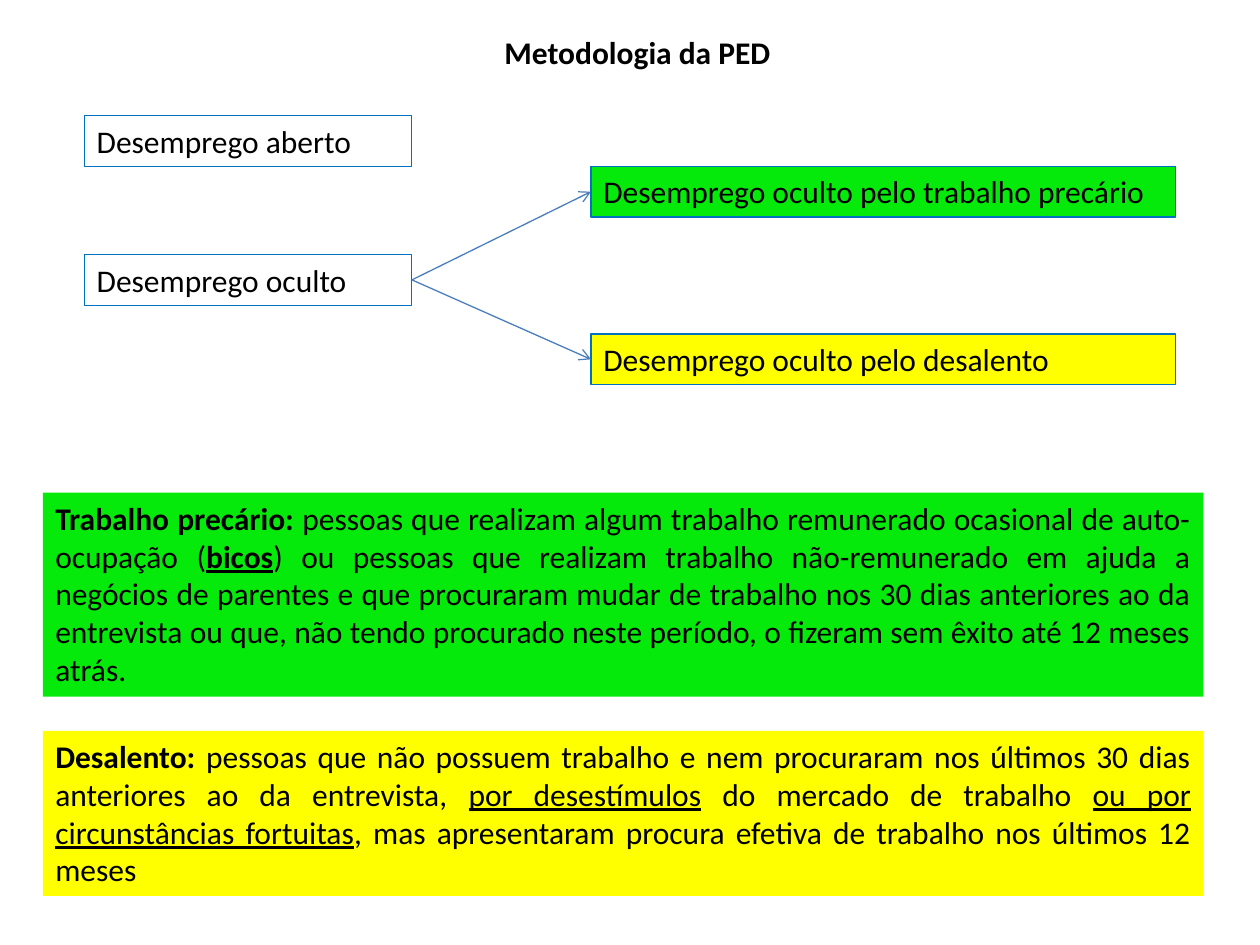
from lxml.etree import SubElement
from pptx import Presentation
from pptx.dml.color import RGBColor
from pptx.enum.shapes import MSO_CONNECTOR
from pptx.enum.text import MSO_ANCHOR, MSO_AUTO_SIZE, PP_ALIGN
from pptx.oxml.ns import qn
from pptx.util import Pt

BLACK = RGBColor(0x00, 0x00, 0x00)
GREEN = RGBColor(0x06, 0xEA, 0x0B)
YELLOW = RGBColor(0xFF, 0xFF, 0x00)
BORDER = RGBColor(0x00, 0x70, 0xC0)
ARROW = RGBColor(0x4B, 0x7E, 0xBC)

TITLE = "Metodologia da PED"
TYPES = [("Desemprego aberto", 66.2), ("Desemprego oculto", 145.4)]
HIDDEN_TYPES = [
    ("Desemprego oculto pelo trabalho precário", 95, GREEN),
    ("Desemprego oculto pelo desalento", 190.8, YELLOW),
]
DEFINITIONS = [
    (281.5, 116.6, GREEN, [
        ("Trabalho precário:", "b"),
        (" pessoas que realizam algum trabalho remunerado ocasional de auto-ocupação (", ""),
        ("bicos", "bu"),
        (") ou pessoas que realizam trabalho não-remunerado em ajuda a negócios de "
         "parentes e que procuraram mudar de trabalho nos 30 dias anteriores ao da "
         "entrevista ou que, não tendo procurado neste período, o fizeram sem êxito "
         "até 12 meses atrás.", ""),
    ]),
    (417.6, 94.3, YELLOW, [
        ("Desalento:", "b"),
        (" pessoas que não possuem trabalho e nem procuraram nos últimos 30 dias "
         "anteriores ao da entrevista, ", ""),
        ("por desestímulos", "u"),
        (" do mercado de trabalho ", ""),
        ("ou por circunstâncias fortuitas", "u"),
        (", mas apresentaram procura efetiva de trabalho nos últimos 12 meses", ""),
    ]),
]
LINE_HEIGHT = 29.1
RIGHT_SITE, LEFT_SITE = 3, 1


def write(box, runs, align):
    frame = box.text_frame
    frame.word_wrap = True
    frame.auto_size = MSO_AUTO_SIZE.SHAPE_TO_FIT_TEXT
    frame.vertical_anchor = MSO_ANCHOR.TOP
    paragraph = frame.paragraphs[0]
    paragraph.alignment = align
    paragraph.font.name = "Calibri"
    paragraph.font.size = Pt(18)
    paragraph.font.color.rgb = BLACK
    for text, style in runs:
        run = paragraph.add_run()
        run.text = text
        run.font.bold = "b" in style
        run.font.underline = "u" in style


def add_box(slide, left, top, width, height, runs, fill=None, border=None, align=PP_ALIGN.LEFT):
    box = slide.shapes.add_textbox(Pt(left), Pt(top), Pt(width), Pt(height))
    if fill is not None:
        box.fill.solid()
        box.fill.fore_color.rgb = fill
    if border is not None:
        box.line.color.rgb = border
        box.line.width = Pt(0.75)
    write(box, runs, align)
    return box


def add_arrow(slide, source, target):
    arrow = slide.shapes.add_connector(MSO_CONNECTOR.STRAIGHT, 0, 0, 0, 0)
    arrow.begin_connect(source, RIGHT_SITE)
    arrow.end_connect(target, LEFT_SITE)
    arrow.line.color.rgb = ARROW
    arrow.line.width = Pt(0.75)
    SubElement(arrow.line._get_or_add_ln(), qn("a:tailEnd"), type="arrow")
    SubElement(arrow._element.spPr, qn("a:effectLst"))


def main():
    deck = Presentation()
    deck.slide_width, deck.slide_height = Pt(720), Pt(540)
    slide = deck.slides.add_slide(deck.slide_layouts[5])

    title = slide.shapes.title
    title.left, title.top, title.width, title.height = Pt(141.8), Pt(15.1), Pt(445), Pt(LINE_HEIGHT)
    write(title, [(TITLE, "b")], PP_ALIGN.CENTER)

    type_boxes = [
        add_box(slide, 48.2, top, 187.2, LINE_HEIGHT, [(label, "")], border=BORDER)
        for label, top in TYPES
    ]
    for label, top, fill in HIDDEN_TYPES:
        hidden = add_box(slide, 337.7, top, 334.1, LINE_HEIGHT, [(label, "")], fill, BORDER)
        add_arrow(slide, type_boxes[-1], hidden)

    for top, height, fill, runs in DEFINITIONS:
        add_box(slide, 24.5, top, 663.1, height, runs, fill, align=PP_ALIGN.JUSTIFY)

    deck.save("out.pptx")


if __name__ == "__main__":
    main()
